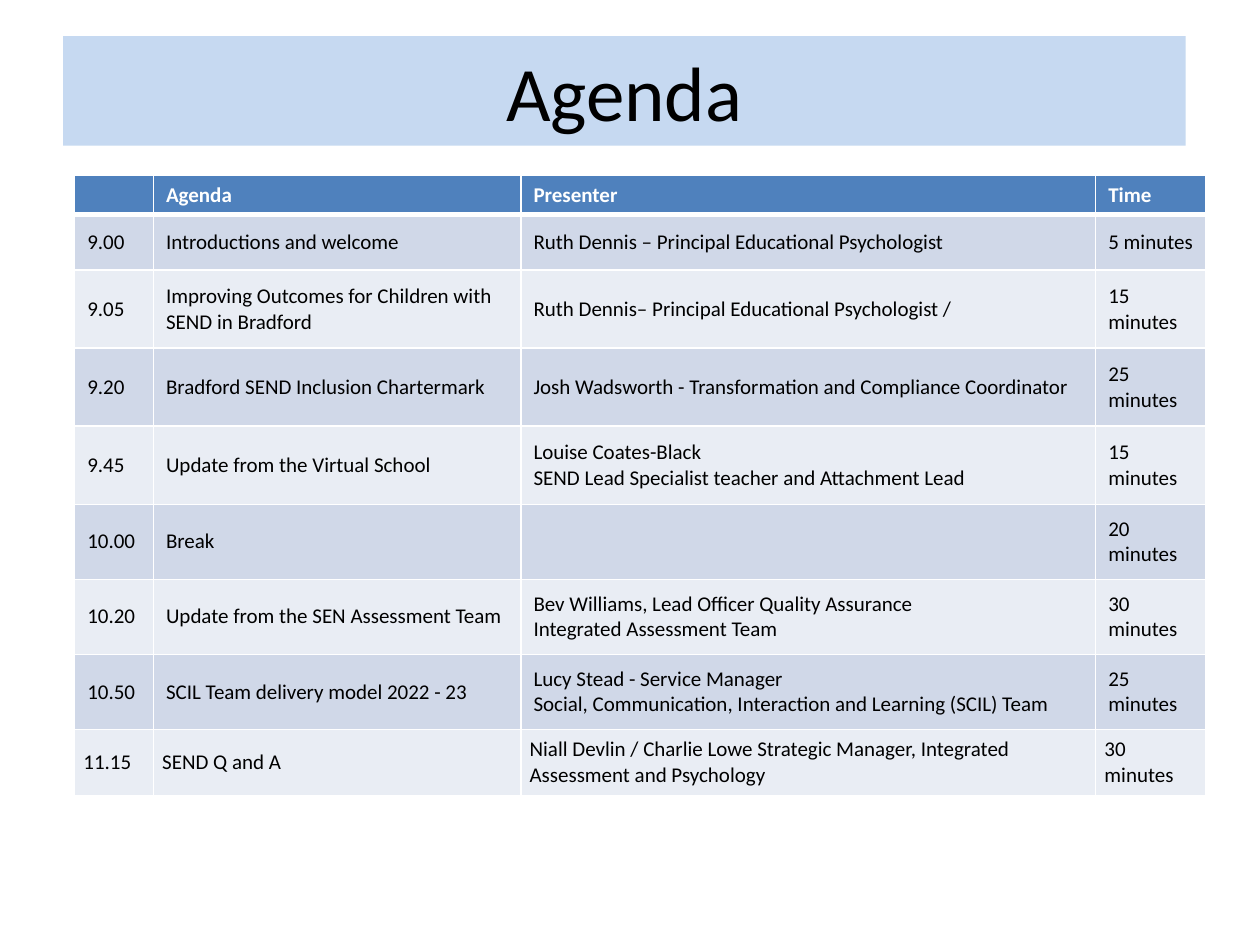
from lxml import etree
from pptx import Presentation
from pptx.dml.color import RGBColor
from pptx.enum import text
from pptx.oxml import ns
from pptx.util import Pt

TITLE = "Agenda"
HEADER = ("", "Agenda", "Presenter", "Time")
SESSIONS = [
    ("9.00", "Introductions and welcome",
     "Ruth Dennis – Principal Educational Psychologist", "5 minutes"),
    ("9.05", "Improving Outcomes for Children with SEND in Bradford",
     "Ruth Dennis– Principal Educational Psychologist /", "15 minutes"),
    ("9.20", "Bradford SEND Inclusion Chartermark",
     "Josh Wadsworth - Transformation and Compliance Coordinator", "25 minutes"),
    ("9.45", "Update from the Virtual School",
     "Louise Coates-Black\nSEND Lead Specialist teacher and Attachment Lead",
     "15 minutes"),
    ("10.00", "Break", "", "20 minutes"),
    ("10.20", "Update from the SEN Assessment Team",
     "Bev Williams, Lead Officer Quality Assurance\nIntegrated Assessment Team",
     "30 minutes"),
    ("10.50", "SCIL Team delivery model 2022 - 23",
     "Lucy Stead - Service Manager\n"
     "Social, Communication, Interaction and Learning (SCIL) Team", "25 minutes"),
    ("11.15", "SEND Q and A",
     "Niall Devlin / Charlie Lowe Strategic Manager, "
     "Integrated Assessment and Psychology", "30 minutes"),
]
COLUMN_WIDTHS = (45, 210, 328.5, 62.8)
ROW_HEIGHTS = (22, 32, 44.6, 44.6, 44.6, 42.9, 42.9, 42.9, 38)

FONT = "Calibri"
BODY_SIZE = 12
BLACK = RGBColor(0x00, 0x00, 0x00)
WHITE = RGBColor(0xFF, 0xFF, 0xFF)
TITLE_FILL = RGBColor(0xC6, 0xD9, 0xF1)
HEADER_FILL = RGBColor(0x4F, 0x81, 0xBD)
BAND_FILLS = (RGBColor(0xE9, 0xED, 0xF4), RGBColor(0xD0, 0xD8, 0xE8))


def add_run(paragraph, words, size, color, bold=False):
    run = paragraph.add_run()
    run.text = words
    run.font.name = FONT
    run.font.size = Pt(size)
    run.font.bold = bold
    run.font.color.rgb = color


def set_borders(cell, **widths):
    """Draw white borders; widths are in points, keyed L, R, T and B."""
    properties = cell._tc.get_or_add_tcPr()
    for side, width in widths.items():
        line = etree.SubElement(properties, ns.qn(f"a:ln{side}"), w=str(Pt(width)))
        fill = etree.SubElement(line, ns.qn("a:solidFill"))
        etree.SubElement(fill, ns.qn("a:srgbClr"), val=str(WHITE))


def fill_cell(cell, words, row):
    is_header = row == 0
    set_borders(cell, L=1, R=1, T=3 if row == 1 else 1, B=3 if is_header else 1)
    cell.fill.solid()
    cell.fill.fore_color.rgb = HEADER_FILL if is_header else BAND_FILLS[row % 2]
    cell.vertical_anchor = text.MSO_ANCHOR.MIDDLE
    if row == len(SESSIONS):
        cell.margin_left = cell.margin_right = Pt(5)
        cell.margin_top = cell.margin_bottom = 0
    frame = cell.text_frame
    for index, line in enumerate(words.split("\n")):
        paragraph = frame.add_paragraph() if index else frame.paragraphs[0]
        if line:
            add_run(paragraph, line, BODY_SIZE, WHITE if is_header else BLACK, is_header)
        else:
            # Keeps an empty cell from stretching its row
            etree.SubElement(paragraph._p, ns.qn("a:endParaRPr"), sz=str(BODY_SIZE * 100))


def add_title(slide):
    title = slide.shapes.title
    title.left, title.top, title.width, title.height = Pt(36), Pt(20.6), Pt(641.5), Pt(62.6)
    title.fill.solid()
    title.fill.fore_color.rgb = TITLE_FILL
    title.text_frame.vertical_anchor = text.MSO_ANCHOR.MIDDLE
    paragraph = title.text_frame.paragraphs[0]
    paragraph.alignment = text.PP_ALIGN.CENTER
    add_run(paragraph, TITLE, 44, BLACK)


def add_agenda(slide):
    rows = [HEADER, *SESSIONS]
    table = slide.shapes.add_table(
        len(rows), len(HEADER), Pt(42.7), Pt(100.4),
        Pt(sum(COLUMN_WIDTHS)), Pt(sum(ROW_HEIGHTS))).table
    for column, width in zip(table.columns, COLUMN_WIDTHS):
        column.width = Pt(width)
    for row, (entries, height) in enumerate(zip(rows, ROW_HEIGHTS)):
        table.rows[row].height = Pt(height)
        for column, words in enumerate(entries):
            fill_cell(table.cell(row, column), words, row)


def main():
    presentation = Presentation()
    presentation.slide_width, presentation.slide_height = Pt(720), Pt(540)
    slide = presentation.slides.add_slide(presentation.slide_layouts[5])
    add_title(slide)
    add_agenda(slide)
    presentation.save("out.pptx")


if __name__ == "__main__":
    main()
